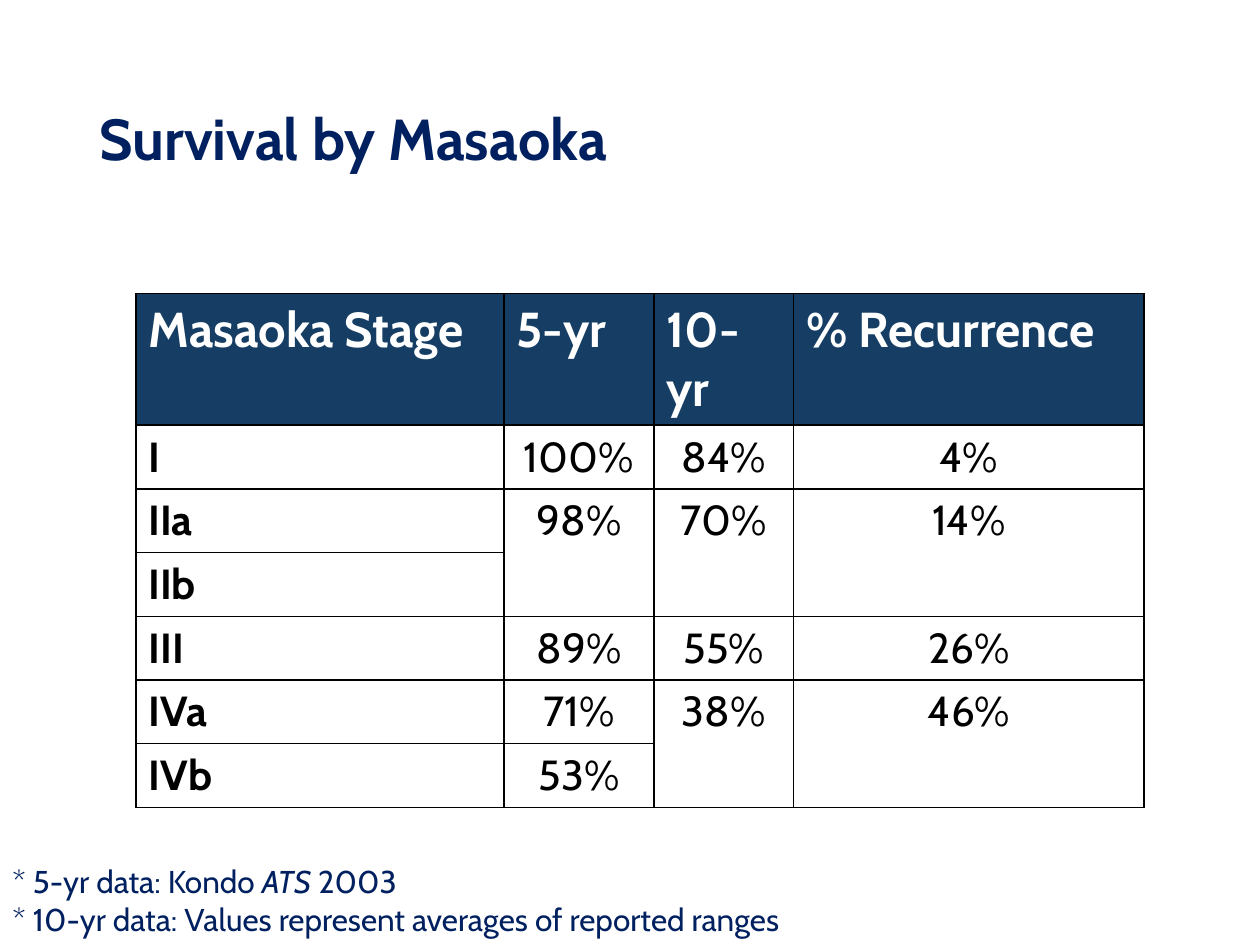
from lxml import etree
from pptx import Presentation
from pptx.dml.color import RGBColor
from pptx.enum import text as t
from pptx.oxml import ns
from pptx.util import Inches, Pt

FONT = "Cabin"
HUES = {"navy": "002060", "head": "163E64", "white": "FFFFFF", "black": "000000"}
COLS = [2.92, 1.19, 1.11, 2.78]
ROWS = [0.67] + [0.49] * 6
DATA = [
    ["Masaoka Stage", "5-yr", "10-yr", "% Recurrence"],
    ["I", "100%", "84%", "4%"],
    ["IIa", "98%", "70%", "14%"],
    ["IIb", None, None, None],
    ["III", "89%", "55%", "26%"],
    ["IVa", "71%", "38%", "46%"],
    ["IVb", "53%", None, None],
]


def style(para, size, hue, bold=False):
    font = para.font
    font.name, font.size, font.bold = FONT, Pt(size), bold
    font.color.rgb = RGBColor.from_string(HUES[hue])


def add_sub(node, tag, **attrs):
    return etree.SubElement(node, ns.qn(tag), attrs)


def add_edges(cell):
    props = cell._tc.get_or_add_tcPr()
    for side in ("lnL", "lnR", "lnT", "lnB"):
        line = add_sub(props, "a:" + side, w=str(Pt(1)))
        add_sub(add_sub(line, "a:solidFill"), "a:srgbClr", val=HUES["black"])


def add_gap(para):
    props = para._p.get_or_add_pPr()
    gap = etree.Element(ns.qn("a:spcBef"))
    add_sub(gap, "a:spcPct", val="20000")
    props.insert(0, gap)


def fill_cell(cell, words, row, col):
    add_edges(cell)
    if row == 0:
        cell.fill.solid()
        cell.fill.fore_color.rgb = RGBColor.from_string(HUES["head"])
    else:
        cell.fill.background()
    para = cell.text_frame.paragraphs[0]
    if words:
        para.text = words
    if row and col:
        para.alignment = t.PP_ALIGN.CENTER
    style(para, 24 if row else 28, "black" if row else "white", row == 0 or col == 0)
    add_gap(para)


def add_grid(slide):
    frame = slide.shapes.add_table(
        len(ROWS), len(COLS), Inches(1.08), Inches(2.33),
        Inches(sum(COLS)), Inches(sum(ROWS)))
    table = frame.table
    table.horz_banding = False
    for col, width in zip(table.columns, COLS):
        col.width = Inches(width)
    for row, height in zip(table.rows, ROWS):
        row.height = Inches(height)
    for r, line in enumerate(DATA):
        for c, words in enumerate(line):
            fill_cell(table.cell(r, c), words, r, c)
            if words is None:
                table.cell(r - 1, c).merge(table.cell(r, c))


def set_title(slide, words):
    title = slide.shapes.title
    title.left, title.top = Inches(0.69), Inches(0.4)
    title.width, title.height = Inches(8.62), Inches(1.45)
    frame = title.text_frame
    frame.text = words
    frame.vertical_anchor = t.MSO_ANCHOR.MIDDLE
    para = frame.paragraphs[0]
    para.alignment = t.PP_ALIGN.LEFT
    para.line_spacing = 0.9
    style(para, 33, "navy", True)


def add_notes(slide, lines):
    box = slide.shapes.add_textbox(Inches(0), Inches(6.79), Inches(7.75), Inches(0.71))
    frame = box.text_frame
    frame.word_wrap = True
    frame.auto_size = t.MSO_AUTO_SIZE.SHAPE_TO_FIT_TEXT
    for i, parts in enumerate(lines):
        para = frame.add_paragraph() if i else frame.paragraphs[0]
        style(para, 18, "navy")
        for words, slant in parts:
            run = para.add_run()
            run.text = words
            if slant:
                run.font.italic = True


def main():
    deck = Presentation()
    deck.slide_width, deck.slide_height = Inches(10), Inches(7.5)
    slide = deck.slides.add_slide(deck.slide_layouts[5])
    set_title(slide, "Survival by Masaoka")
    add_grid(slide)
    add_notes(slide, [
        [("* 5-yr data: Kondo ", False), ("ATS", True), (" 2003", False)],
        [("* 10-yr data: Values represent averages of reported ranges", False)],
    ])
    deck.save("out.pptx")


if __name__ == "__main__":
    main()
